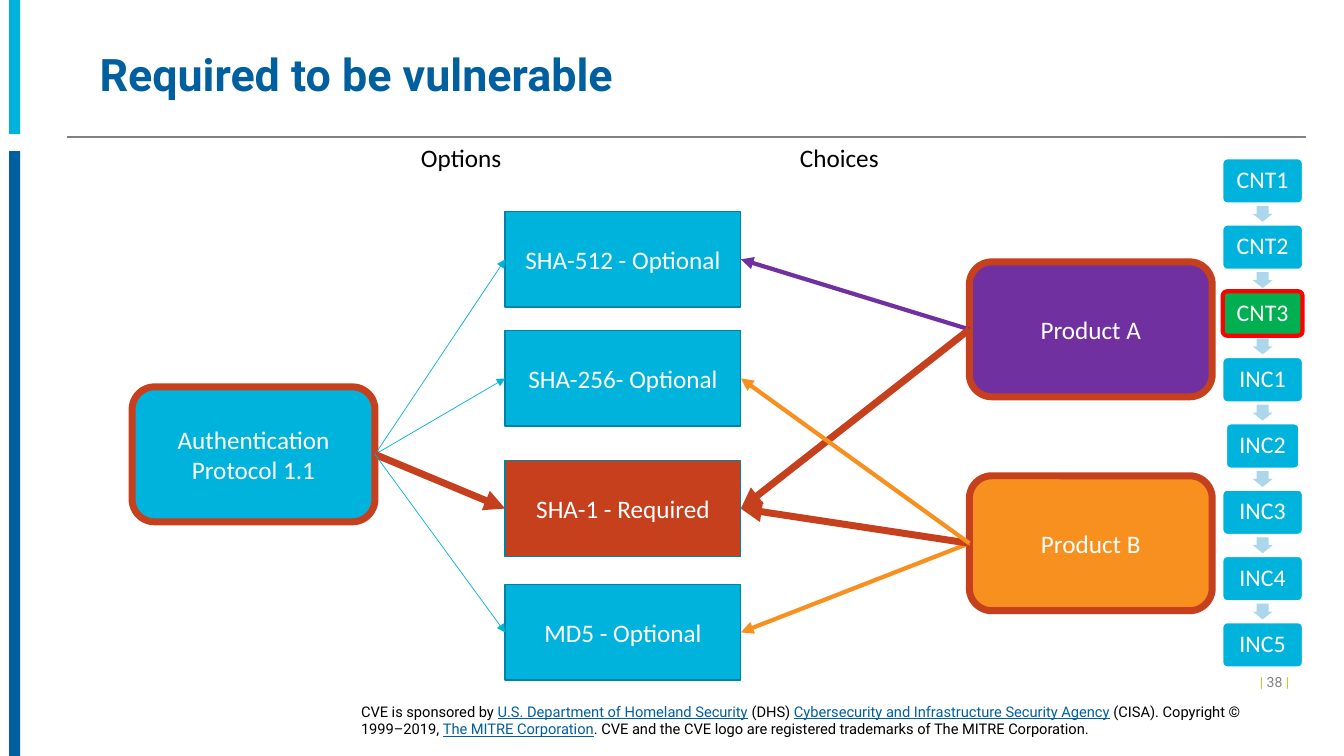
from lxml.etree import SubElement
from pptx import Presentation
from pptx.dml.color import RGBColor
from pptx.enum.shapes import MSO_CONNECTOR as Line, MSO_SHAPE as Shape
from pptx.enum.text import MSO_ANCHOR as Anchor, PP_ALIGN as Align
from pptx.oxml.ns import qn
from pptx.util import Cm, Pt

CYAN, BLUE, RUST = "00B3DC", "005F9E", "C6401D"
PURPLE, ORANGE, TEAL = "7030A0", "F7901E", "0084A3"
WHITE, BLACK, GRAY, LIME = "FFFFFF", "000000", "808080", "C1CD23"
TOP, LEFT, BOTTOM, RIGHT = range(4)


def rgb(code):
    return RGBColor.from_string(code)


def add_run(paragraph, text, size, color, font="Calibri", bold=False, underline=False):
    run = paragraph.add_run()
    run.text = text
    run.font.size = Pt(size)
    run.font.name = font
    run.font.bold = bold
    run.font.underline = underline
    run.font.color.rgb = rgb(color)


def add_block(slide, kind, box, fill, border=None, weight=1):
    block = slide.shapes.add_shape(kind, *map(Cm, box))
    block.shadow.inherit = False
    block.fill.solid()
    block.fill.fore_color.rgb = rgb(fill)
    if border:
        block.line.color.rgb = rgb(border)
        block.line.width = Pt(weight)
    else:
        block.line.fill.background()
    return block


def add_node(slide, kind, box, text, fill, border, weight=1, size=18):
    node = add_block(slide, kind, box, fill, border, weight)
    node.text_frame.vertical_anchor = Anchor.MIDDLE
    caption = node.text_frame.paragraphs[0]
    caption.alignment = Align.CENTER
    add_run(caption, text, size, WHITE)
    return node


def add_text(slide, box, anchor=Anchor.TOP, wrap=True):
    frame = slide.shapes.add_textbox(*map(Cm, box)).text_frame
    frame.word_wrap = wrap
    frame.vertical_anchor = anchor
    return frame


def add_line(slide, color, weight, ends=(0, 0, 0, 0)):
    line = slide.shapes.add_connector(Line.STRAIGHT, *map(Cm, ends))
    line.line.color.rgb = rgb(color)
    line.line.width = Pt(weight)
    SubElement(line._element.spPr, qn("a:effectLst"))
    return line


def add_arrow(slide, source, source_side, target, target_side, color, weight):
    arrow = add_line(slide, color, weight)
    arrow.begin_connect(source, source_side)
    arrow.end_connect(target, target_side)
    outline = arrow._element.spPr.find(qn("a:ln"))
    SubElement(outline, qn("a:tailEnd"), type="triangle")


def add_frame(slide):
    # Side bars and title rule
    add_block(slide, Shape.RECTANGLE, (0.23, 0, 0.28, 3.38), CYAN)
    add_block(slide, Shape.RECTANGLE, (0.23, 3.81, 0.28, 15.24), BLUE)
    add_line(slide, GRAY, 1, (1.7, 3.45, 32.92, 3.45))

    # Title
    title = add_text(slide, (2.26, 0.76, 25.91, 2.41), Anchor.MIDDLE).paragraphs[0]
    title.line_spacing = Pt(32)
    add_run(title, "Required to be vulnerable", 32, BLUE, "Roboto", bold=True)

    # Footer, with every second part underlined
    footer = add_text(slide, (8.97, 17.58, 23.27, 1.14))
    footer.margin_left = footer.margin_right = Cm(0.13)
    parts = (
        "CVE is sponsored by ",
        "U.S. Department of Homeland Security",
        " (DHS) ",
        "Cybersecurity and Infrastructure Security Agency",
        " (CISA). Copyright © 1999–2019, ",
        "The MITRE Corporation",
        ". CVE and the CVE logo are registered trademarks of The MITRE Corporation.",
    )
    for index, part in enumerate(parts):
        marked = index % 2 == 1
        add_run(footer.paragraphs[0], part, 10.5, BLUE if marked else BLACK,
                "Roboto", underline=marked)

    # Page number
    page = add_text(slide, (30.91, 17.02, 1.83, 0.51), Anchor.BOTTOM).paragraphs[0]
    page.alignment = Align.RIGHT
    for part, color in (("| ", LIME), ("38 ", GRAY), ("|", LIME)):
        add_run(page, part, 10, color, "Roboto")


def add_diagram(slide):
    # Protocol and products
    protocol, product_a, product_b = [
        add_node(slide, Shape.ROUNDED_RECTANGLE, (x, y, 6.12, 3.4), text, fill, RUST, 5)
        for x, y, text, fill in (
            (3.33, 9.75, "Authentication Protocol 1.1", CYAN),
            (24.43, 6.6, "Product A", PURPLE),
            (24.43, 11.99, "Product B", ORANGE),
        )
    ]

    # Hash options
    sha512, sha256, sha1, md5 = [
        add_node(slide, Shape.RECTANGLE, (12.73, y, 5.94, 2.41), text, fill, TEAL)
        for y, text, fill in (
            (5.33, "SHA-512 - Optional", CYAN),
            (8.33, "SHA-256- Optional", CYAN),
            (11.61, "SHA-1 - Required", RUST),
            (14.73, "MD5 - Optional", CYAN),
        )
    ]

    # Options offered by the protocol
    for option in (sha512, sha256, sha1, md5):
        color, weight = (RUST, 5) if option is sha1 else (CYAN, 0.5)
        add_arrow(slide, protocol, RIGHT, option, LEFT, color, weight)

    # Choices made by the products
    for product, option, color, weight in (
        (product_a, sha512, PURPLE, 3),
        (product_a, sha1, RUST, 5),
        (product_b, md5, ORANGE, 3),
        (product_b, sha1, RUST, 5),
        (product_b, sha256, ORANGE, 3),
    ):
        add_arrow(slide, product, LEFT, option, RIGHT, color, weight)

    # Column labels
    for x, label in ((10.36, "Options"), (19.91, "Choices")):
        heading = add_text(slide, (x, 3.45, 2.55, 1.02), wrap=False)
        add_run(heading.paragraphs[0], label, 18, BLACK)


def add_steps(slide):
    steps = ("CNT1", "CNT2", "CNT3", "INC1", "INC2", "INC3", "INC4", "INC5")
    center, pitch = 31.82, 1.67
    for index, name in enumerate(steps):
        y = 4 + index * pitch
        width = 1.83 if name == "INC2" else 2.01
        fill, border, weight = ("00B050", "FF0000", 3) if name == "CNT3" else (CYAN, WHITE, 1)
        step = add_node(slide, Shape.ROUNDED_RECTANGLE, (center - width / 2, y, width, 1.12),
                        name, fill, border, weight, 17)
        step.adjustments[0] = 0.1
        step.text_frame.word_wrap = False
        step.text_frame.paragraphs[0].line_spacing = 0.9
        if index < len(steps) - 1:
            pointer = add_block(slide, Shape.RIGHT_ARROW,
                                (center - 0.2, y + 1.14, 0.4, 0.5), "ABD6EB")
            pointer.rotation = 90
            pointer.adjustments[0] = 0.6


def main():
    deck = Presentation()
    deck.slide_width, deck.slide_height = Cm(33.87), Cm(19.05)
    slide = deck.slides.add_slide(deck.slide_layouts[6])
    add_frame(slide)
    add_diagram(slide)
    add_steps(slide)
    deck.save("out.pptx")


if __name__ == "__main__":
    main()
